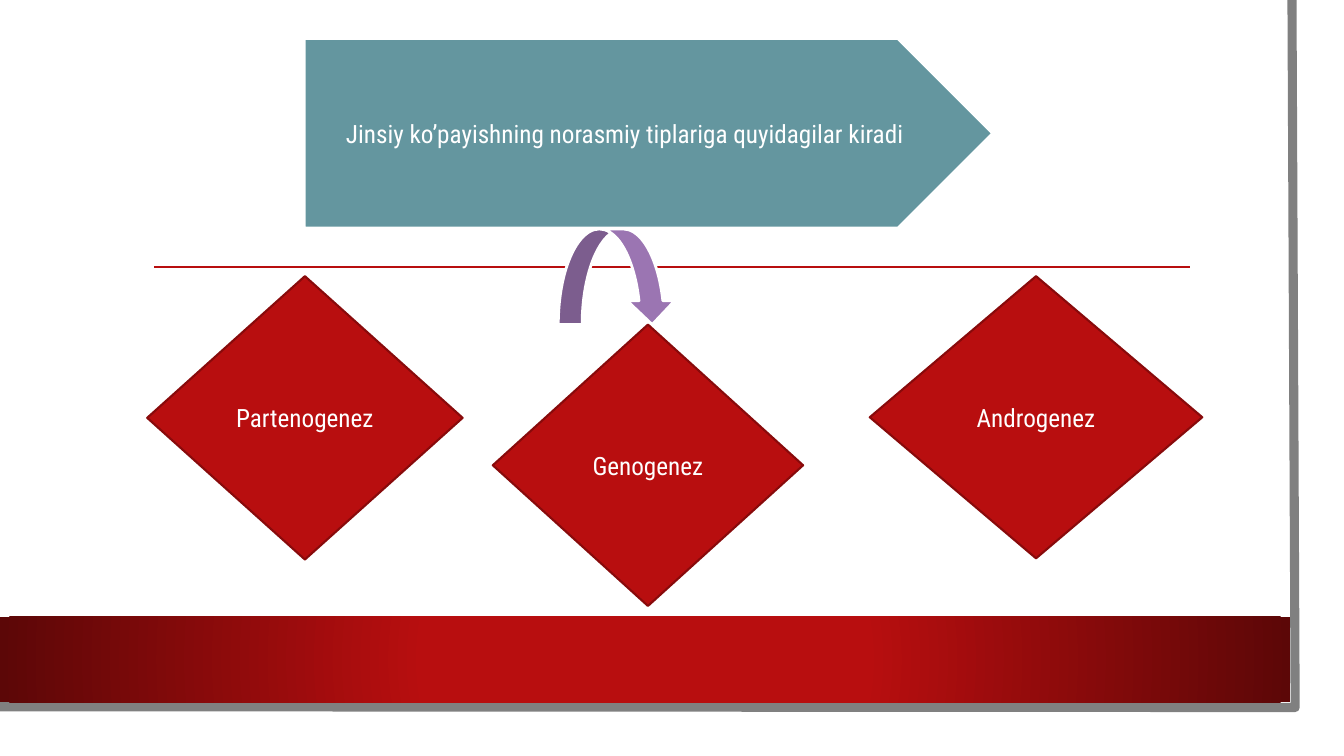
"""Build a slide on the irregular types of sexual reproduction."""
from dataclasses import dataclass
from typing import Optional

from lxml.etree import SubElement
from pptx import Presentation
from pptx.dml.color import RGBColor
from pptx.enum.shapes import MSO_CONNECTOR, MSO_SHAPE
from pptx.enum.text import MSO_ANCHOR, PP_ALIGN
from pptx.oxml.ns import qn
from pptx.util import Cm, Pt

WHITE = RGBColor(0xFF, 0xFF, 0xFF)
GRAY = RGBColor(0x80, 0x80, 0x80)
RED = RGBColor(0xB8, 0x0E, 0x0F)
DARK_RED = RGBColor(0x88, 0x0A, 0x0B)
DEEP_RED = RGBColor(0x5C, 0x07, 0x07)
TEAL = RGBColor(0x64, 0x96, 0x9F)
PURPLE = RGBColor(0x9B, 0x75, 0xB2)
FONT = "Roboto Condensed"


@dataclass
class Block:
    kind: MSO_SHAPE
    left: float
    top: float
    width: float
    height: float
    fill: RGBColor
    line: RGBColor
    weight: float
    text: str = ""


def decision(left: float, top: float, width: float, height: float, text: str) -> Block:
    return Block(MSO_SHAPE.FLOWCHART_DECISION, left, top, width, height,
                 RED, DARK_RED, 1.5, text)


BLOCKS = [
    Block(MSO_SHAPE.PENTAGON, 7.67, 0.97, 17.35, 4.78, TEAL, WHITE, 2,
          "Jinsiy ko’payishning norasmiy tiplariga quyidagilar kiradi"),
    Block(MSO_SHAPE.CURVED_DOWN_ARROW, 14.07, 5.77, 2.97, 2.41, PURPLE, WHITE, 2),
    decision(3.71, 6.96, 7.95, 7.14, "Partenogenez"),
    decision(12.42, 8.18, 7.82, 7.09, "Genogenez"),
    decision(21.92, 6.96, 8.38, 7.11, "Androgenez"),
]


def set_line(sp, color: Optional[RGBColor], weight: float = 0) -> None:
    if color is None:
        sp.line.fill.background()
    else:
        sp.line.color.rgb = color
        sp.line.width = Pt(weight)


def write(sp, text: str, *, size: float = 18, font: str = FONT,
          color: RGBColor = WHITE, align: PP_ALIGN = PP_ALIGN.CENTER) -> None:
    tf = sp.text_frame
    tf.word_wrap = True
    tf.vertical_anchor = MSO_ANCHOR.MIDDLE
    p = tf.paragraphs[0]
    p.alignment = align
    r = p.add_run()
    r.text = text
    r.font.size = Pt(size)
    r.font.name = font
    r.font.color.rgb = color


def draw_block(s, block: Block) -> None:
    sp = s.shapes.add_shape(block.kind, Cm(block.left), Cm(block.top),
                            Cm(block.width), Cm(block.height))
    sp.shadow.inherit = False
    sp.fill.solid()
    sp.fill.fore_color.rgb = block.fill
    set_line(sp, block.line, block.weight)
    if block.text:
        write(sp, block.text)


def draw_page_edge(s) -> None:
    builder = s.shapes.build_freeform(Cm(32.56), Cm(0))
    builder.add_line_segments([(Cm(32.64), Cm(17.83)), (Cm(-0.08), Cm(17.81))], close=False)
    sp = builder.convert_to_shape()
    sp.shadow.inherit = False
    sp.fill.background()
    set_line(sp, GRAY, 6.5)


def draw_band(s) -> None:
    sp = s.shapes.add_shape(MSO_SHAPE.RECTANGLE, Cm(0), Cm(15.54), Cm(32.51), Cm(2.16))
    sp.shadow.inherit = False
    sp.fill.gradient()
    for stop, position, color in zip(sp.fill.gradient_stops, (0.34, 1), (RED, DEEP_RED)):
        stop.position = position
        stop.color.rgb = color
    grad = sp.fill._xPr.find(qn("a:gradFill"))
    grad.remove(grad.find(qn("a:lin")))
    radial = SubElement(grad, qn("a:path"), {"path": "circle"})
    SubElement(radial, qn("a:fillToRect"), dict.fromkeys("ltrb", "50000"))
    set_line(sp, None)


def draw_rule(s) -> None:
    rule = s.shapes.add_connector(MSO_CONNECTOR.STRAIGHT, Cm(3.89), Cm(6.73), Cm(30), Cm(6.73))
    set_line(rule, RED, 1.25)
    SubElement(rule._element.spPr, qn("a:effectLst"))


def main() -> None:
    prs = Presentation()
    prs.slide_width, prs.slide_height = Cm(33.87), Cm(19.05)
    s = prs.slides.add_slide(prs.slide_layouts[6])
    draw_page_edge(s)
    draw_band(s)
    draw_rule(s)
    for block in BLOCKS:
        draw_block(s, block)
    prs.save("out.pptx")


if __name__ == "__main__":
    main()
